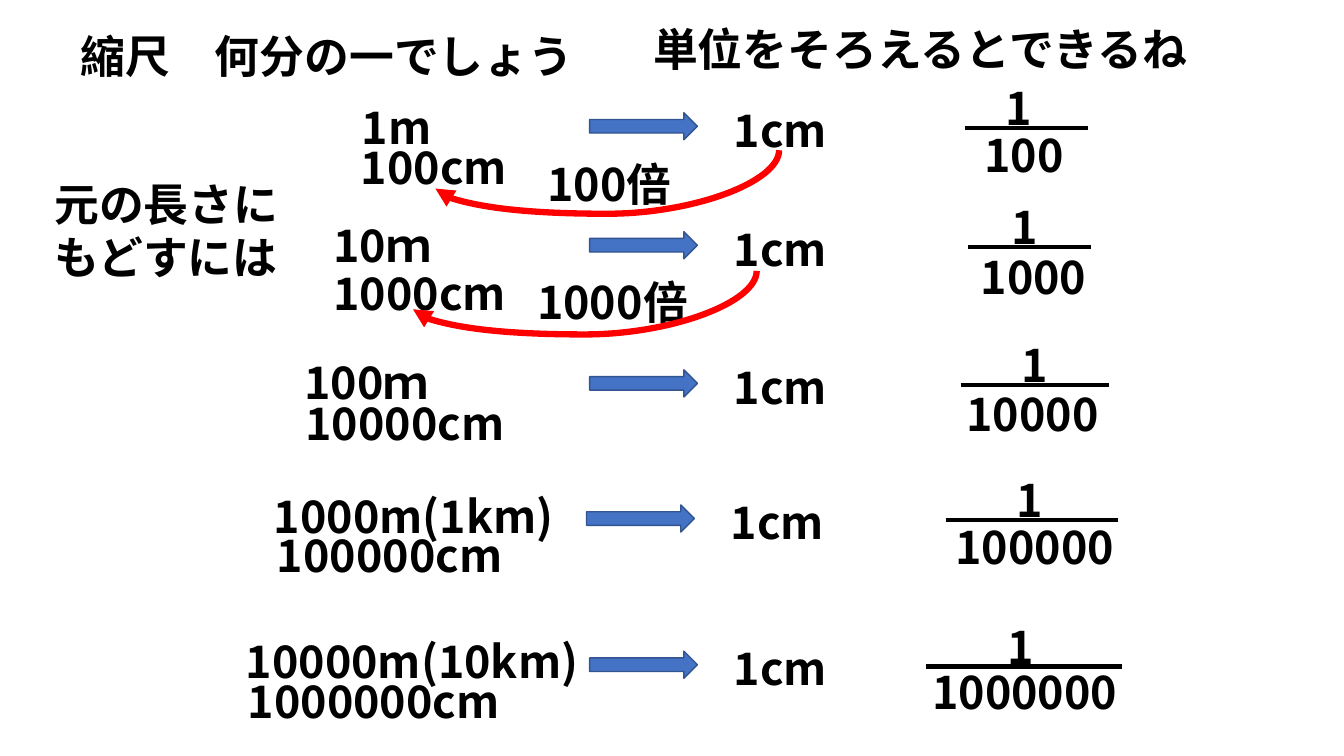
from dataclasses import dataclass

from lxml import etree
from pptx import Presentation
from pptx.dml.color import RGBColor
from pptx.enum.shapes import MSO_CONNECTOR, MSO_SHAPE
from pptx.enum.text import MSO_AUTO_SIZE
from pptx.oxml.ns import qn
from pptx.util import Pt

STRAIGHT, CURVE = MSO_CONNECTOR.STRAIGHT, MSO_CONNECTOR.CURVE
RIGHT_ARROW = MSO_SHAPE.RIGHT_ARROW
FIT = MSO_AUTO_SIZE.SHAPE_TO_FIT_TEXT


@dataclass(frozen=True)
class Theme:
    """Colours, font and line weights of the slide."""
    font: str = "Noto Sans CJK JP"
    size: int = 32
    ink: RGBColor = RGBColor(0, 0, 0)
    blue: RGBColor = RGBColor(0x44, 0x72, 0xC4)
    edge: RGBColor = RGBColor(0x32, 0x54, 0x91)
    red: RGBColor = RGBColor(0xFF, 0, 0)
    bar: float = 3
    swing: float = 4.5


@dataclass(frozen=True)
class Scale:
    """One scale example; dx and dy run from the arrow, den and num from the bar."""
    left: float
    top: float
    metres: str
    metres_box: tuple
    cm: str
    cm_box: tuple
    bar: tuple
    num_dx: float
    den: str
    den_box: tuple


T = Theme()
SCALES = [
    Scale(421.2, 80.5, "1m", (-169.9, -12.8, 124.6), "100cm", (-170.6, 16, 138.2),
          (267.8, 88), 22.3, "100", (7.2, -3.6, 88)),
    Scale(421.2, 165.5, "10ｍ", (-190.1, -13.5, 126.7), "1000cm", (-190.1, 21, 138.2),
          (270, 88), 24.5, "1000", (2.2, -1.4, 98.6)),
    Scale(421.2, 264.2, "100ｍ", (-211, -14.4, 126.7), "10000cm", (-210.2, 15.1, 285.8),
          (265, 106), 36.7, "10000", (-2.9, -2.2, 133.2)),
    Scale(419, 360.7, "1000m(1km)", (-230.4, -15.1, 229), "100000cm", (-228.2, 13, 285.8),
          (256.4, 123.1), 43.9, "100000", (0, -4.3, 147.6)),
    Scale(421.2, 465.1, "10000m(10km)", (-252.7, -15.8, 262.8), "1000000cm", (-251.3, 12.3, 285.8),
          (240.5, 139.7), 51.1, "1000000", (-2.9, -5, 173.5)),
]


def add_text(shapes, text, x, y, w, h=46):
    """Add a bold text box, one paragraph per line."""
    sp = shapes.add_textbox(Pt(x), Pt(y), Pt(w), Pt(h))
    tf = sp.text_frame
    tf.word_wrap = True
    tf.auto_size = FIT
    tf.text = text
    for p in tf.paragraphs:
        f = p.font
        f.name, f.size, f.bold = T.font, Pt(T.size), True
        f.color.rgb = T.ink
        for r in p.runs:
            ea = etree.SubElement(r._r.get_or_add_rPr(), qn("a:ea"))
            ea.set("typeface", T.font)


def add_line(shapes, kind, x1, y1, x2, y2, color, width):
    """Add a connector without shadow."""
    c = shapes.add_connector(kind, Pt(x1), Pt(y1), Pt(x2), Pt(y2))
    c.line.color.rgb = color
    c.line.width = Pt(width)
    etree.SubElement(c._element.spPr, qn("a:effectLst"))
    return c


def add_arrow(shapes, x, y):
    """Add the blue arrow between two lengths."""
    sp = shapes.add_shape(RIGHT_ARROW, Pt(x), Pt(y), Pt(77), Pt(19.4))
    sp.shadow.inherit = False
    sp.fill.solid()
    sp.fill.fore_color.rgb = T.blue
    sp.line.color.rgb = T.edge
    sp.line.width = Pt(1)


def add_fraction(s, x, y, w, num_dx, den, den_box):
    """Group a bar at x, y with 1 above and the denominator below."""
    shapes = s.shapes.add_group_shape().shapes
    add_line(shapes, STRAIGHT, x, y, x + w, y, T.ink, T.bar)
    dx, dy, den_w = den_box
    add_text(shapes, den, x + dx, y + dy, den_w)
    add_text(shapes, "1", x + num_dx, y - 37.3, 38.2)


def add_scale(s, row):
    """Place one example: real length, arrow, map length, fraction."""
    x, y = row.left, row.top
    for text, (dx, dy, w) in ((row.metres, row.metres_box), (row.cm, row.cm_box),
                              ("1cm", (95.8, -10.8, 95))):
        add_text(s.shapes, text, x + dx, y + dy, w)
    add_arrow(s.shapes, x, y)
    dx, w = row.bar
    add_fraction(s, x + dx, y + 11, w, row.num_dx, row.den, row.den_box)


def add_return(s, text, label_x, label_y, x, y, w=245.5, h=27.4):
    """Add a multiplier and a red curve from the top right of its box to the left."""
    add_text(s.shapes, text, label_x, label_y, 149)
    cx, cy = x + w / 2, y + h / 2
    c = add_line(s.shapes, CURVE, cx - h / 2, cy - w / 2, cx + h / 2, cy + w / 2,
                 T.red, T.swing)
    sp_pr = c._element.spPr
    sp_pr.find(qn("a:xfrm")).set("rot", "5400000")
    guides = sp_pr.find(qn("a:prstGeom")).find(qn("a:avLst"))
    gd = etree.SubElement(guides, qn("a:gd"))
    gd.set("name", "adj1")
    gd.set("fmla", "val 165600")
    tail = etree.SubElement(sp_pr.find(qn("a:ln")), qn("a:tailEnd"))
    tail.set("type", "triangle")


def add_headings(s):
    """Place the two headings and the note at the left."""
    add_text(s.shapes, "縮尺　何分の一でしょう", 50.4, 16.6, 391.7)
    add_text(s.shapes, "単位をそろえるとできるね", 459.4, 12.2, 426.2)
    add_text(s.shapes, "元の長さに\nもどすには", 31.7, 122.4, 192.2, 85)


def main():
    """Build and save the slide."""
    prs = Presentation()
    prs.slide_width, prs.slide_height = Pt(960), Pt(540)
    s = prs.slides.add_slide(prs.slide_layouts[6])
    add_headings(s)
    for row in SCALES:
        add_scale(s, row)
    add_return(s, "100倍", 383.8, 108.7, 311, 107.3)
    add_return(s, "1000倍", 376.6, 193, 295, 193.5)
    prs.save("out.pptx")


if __name__ == "__main__":
    main()
